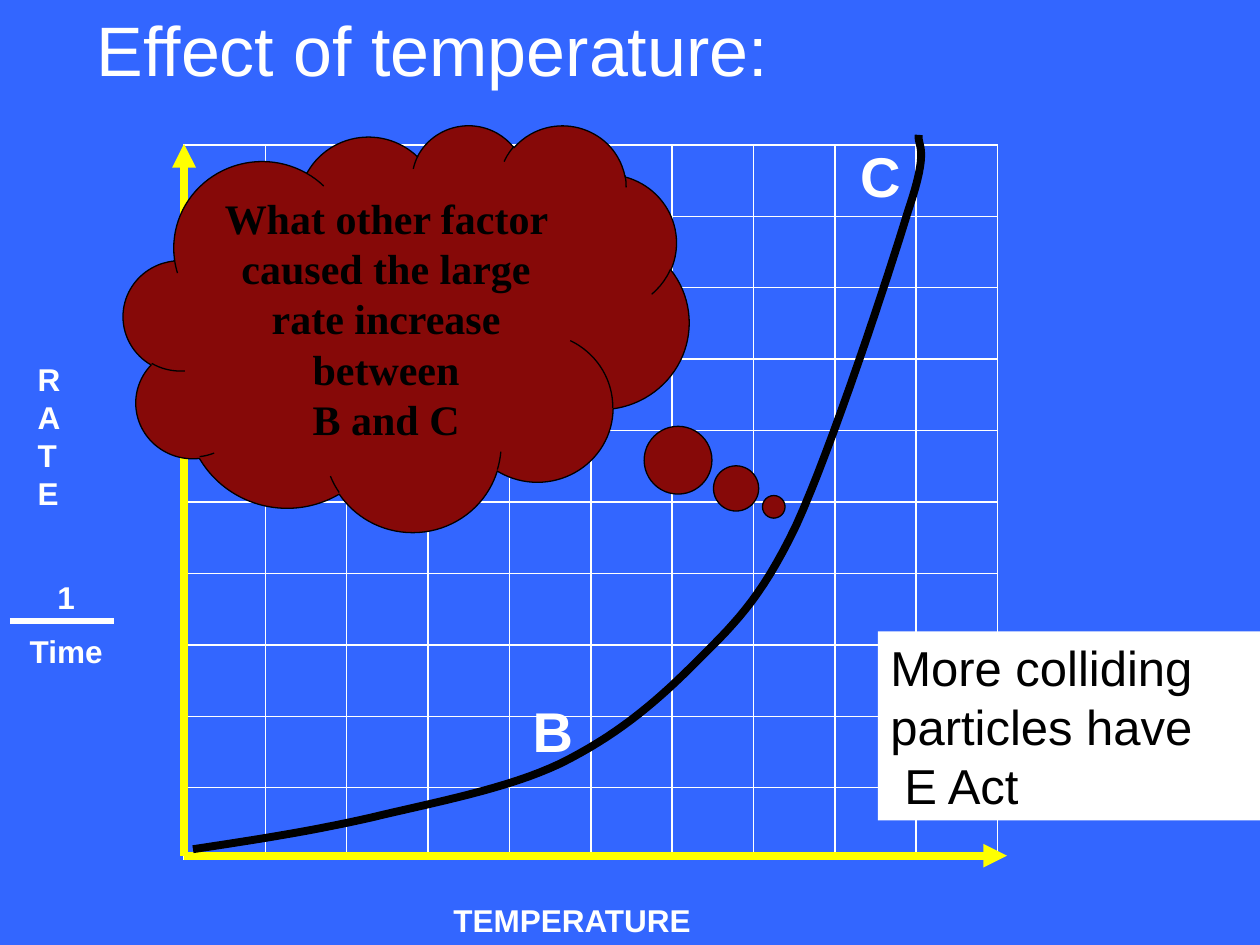
from lxml import etree
from pptx import Presentation
from pptx.dml.color import RGBColor
from pptx.enum.shapes import MSO_CONNECTOR, MSO_SHAPE
from pptx.enum.text import MSO_ANCHOR, PP_ALIGN
from pptx.oxml.ns import qn
from pptx.util import Cm, Pt

LEFT, MID = PP_ALIGN.LEFT, PP_ALIGN.CENTER
TOP = MSO_ANCHOR.TOP
CLOUD, RECT = MSO_SHAPE.CLOUD_CALLOUT, MSO_SHAPE.RECTANGLE
LINE = MSO_CONNECTOR.STRAIGHT

BLUE, WHITE, BLACK = "3366FF", "FFFFFF", "000000"
YELLOW, RED = "FFFF00", "860908"

GRID = 10
COL, ROW = 1.64, 1.44
GRID_X, GRID_Y = 3.71, 2.92
AXIS_Y = 17.25

# Rate curve in cm: a start, then two handles and an end for each bend
START = (3.89, 17.12)
BENDS = [
    ((5.08, 16.94), (6.27, 16.76), (7.49, 16.48)),
    ((8.74, 16.18), (10.24, 15.9), (11.3, 15.39)),
    ((12.37, 14.86), (13.16, 14.22), (13.97, 13.41)),
    ((14.76, 12.62), (15.32, 12.12), (16.05, 10.59)),
    ((16.76, 9.04), (17.91, 5.56), (18.31, 4.24)),
    ((18.75, 2.95), (18.49, 2.97), (18.52, 2.72)),
]
STEPS = 16


def color(code):
    return RGBColor.from_string(code)


def cms(*sizes):
    return [Cm(size) for size in sizes]


def write(shape, *paras, size=18, font="Arial", ink=WHITE, bold=False,
          align=LEFT, gap=0, indent=0):
    """Fill a shape with paragraphs; the indent applies after the first."""
    frame = shape.text_frame
    frame.word_wrap = True
    frame.vertical_anchor = TOP
    for i, text in enumerate(paras):
        para = frame.add_paragraph() if i else frame.paragraphs[0]
        para.text = text
        para.alignment = align
        para.space_before = Pt(gap if i else 0)
        if i and indent:
            para._p.get_or_add_pPr().set("marL", str(Cm(indent)))
        para.font.size = Pt(size)
        para.font.name = font
        para.font.bold = bold
        para.font.color.rgb = color(ink)


def label(shapes, box, *paras, **style):
    write(shapes.add_textbox(*cms(*box)), *paras, **style)


def block(shapes, kind, box, fill, edge=None):
    shape = shapes.add_shape(kind, *cms(*box))
    shape.shadow.inherit = False
    shape.fill.solid()
    shape.fill.fore_color.rgb = color(fill)
    if edge:
        shape.line.color.rgb = color(edge)
        shape.line.width = Pt(0.75)
    else:
        shape.line.fill.background()
    return shape


def rule(shapes, ends, ink, width, arrow=False):
    line = shapes.add_connector(LINE, *cms(*ends))
    line.line.color.rgb = color(ink)
    line.line.width = Pt(width)
    if arrow:
        etree.SubElement(line.line._get_or_add_ln(), qn("a:tailEnd"),
                         type="triangle")
    etree.SubElement(line._element.spPr, qn("a:effectLst"))


def border(cell, ink):
    props = cell._tc.get_or_add_tcPr()
    for i, side in enumerate(("lnL", "lnR", "lnT", "lnB")):
        line = etree.Element(qn("a:" + side), w=str(Pt(1)))
        fill = etree.SubElement(line, qn("a:solidFill"))
        etree.SubElement(fill, qn("a:srgbClr"), val=ink)
        props.insert(i, line)


def grid(shapes):
    box = cms(GRID_X, GRID_Y, GRID * COL, GRID * ROW)
    table = shapes.add_table(GRID, GRID, *box).table
    table.first_row = table.horz_banding = False
    for col in table.columns:
        col.width = Cm(COL)
    for row in table.rows:
        row.height = Cm(ROW)
    for cell in table.iter_cells():
        cell.fill.background()
        border(cell, WHITE)


def bend(points, t):
    """Point at t on a cubic curve."""
    parts = ((1 - t) ** 3, 3 * t * (1 - t) ** 2, 3 * t * t * (1 - t), t ** 3)
    return tuple(Cm(sum(k * p[axis] for k, p in zip(parts, points)))
                 for axis in (0, 1))


def curve(shapes):
    dots, last = [], START
    for points in BENDS:
        dots += [bend((last, *points), n / STEPS)
                 for n in range(1, STEPS + 1)]
        last = points[-1]
    trace = shapes.build_freeform(*cms(*START))
    trace.add_line_segments(dots, close=False)
    shape = trace.convert_to_shape()
    shape.shadow.inherit = False
    shape.fill.background()
    shape.line.color.rgb = color(BLACK)
    shape.line.width = Pt(4.5)


def main():
    deck = Presentation()
    deck.slide_width, deck.slide_height = cms(25.4, 19.05)
    slide = deck.slides.add_slide(deck.slide_layouts[5])
    slide.background.fill.solid()
    slide.background.fill.fore_color.rgb = color(BLUE)
    shapes = slide.shapes

    # Title
    title = shapes.title
    title.left, title.top, title.width, title.height = cms(1.7, 0, 22.71, 1.96)
    write(title, "Effect of temperature:", size=40)

    # Grid and axes
    grid(shapes)
    rule(shapes, (GRID_X, AXIS_Y, GRID_X, 2.9), YELLOW, 4.5, arrow=True)
    rule(shapes, (GRID_X, AXIS_Y, 20.3, AXIS_Y), YELLOW, 4.5, arrow=True)
    label(shapes, (0.51, 7.14, 2.79, 3.3), "R\nA\nT\nE", bold=True)
    label(shapes, (8.89, 18.03, 8.99, 1.02), "TEMPERATURE", bold=True)

    # Question and answer
    cloud = block(shapes, CLOUD, (2.49, 2.51, 11.4, 8.2), RED, BLACK)
    cloud.adjustments[0], cloud.adjustments[1] = 0.65, 0.44
    write(cloud, "What other factor caused the large rate increase between\n"
          "B and C", size=24, font="Times New Roman", ink=BLACK, bold=True,
          align=MID)
    answer = block(shapes, RECT, (17.7, 12.73, 8, 3.81), WHITE)
    write(answer, "More colliding particles have", "E Act", size=28,
          ink=BLACK, indent=0.28)

    # Rate as a fraction
    part = shapes.add_group_shape().shapes
    label(part, (0, 11.53, 2.67, 2.16), "1", "Time", bold=True, align=MID,
          gap=9)
    rule(part, (0.2, 12.52, 2.29, 12.52), WHITE, 3)

    # Curve and its marks
    curve(shapes)
    for mark, x, y in (("C", 17.09, 2.72), ("B", 10.49, 13.92)):
        label(shapes, (x, y, 1, 1.6), mark, size=32, bold=True)

    deck.save("out.pptx")


if __name__ == "__main__":
    main()
